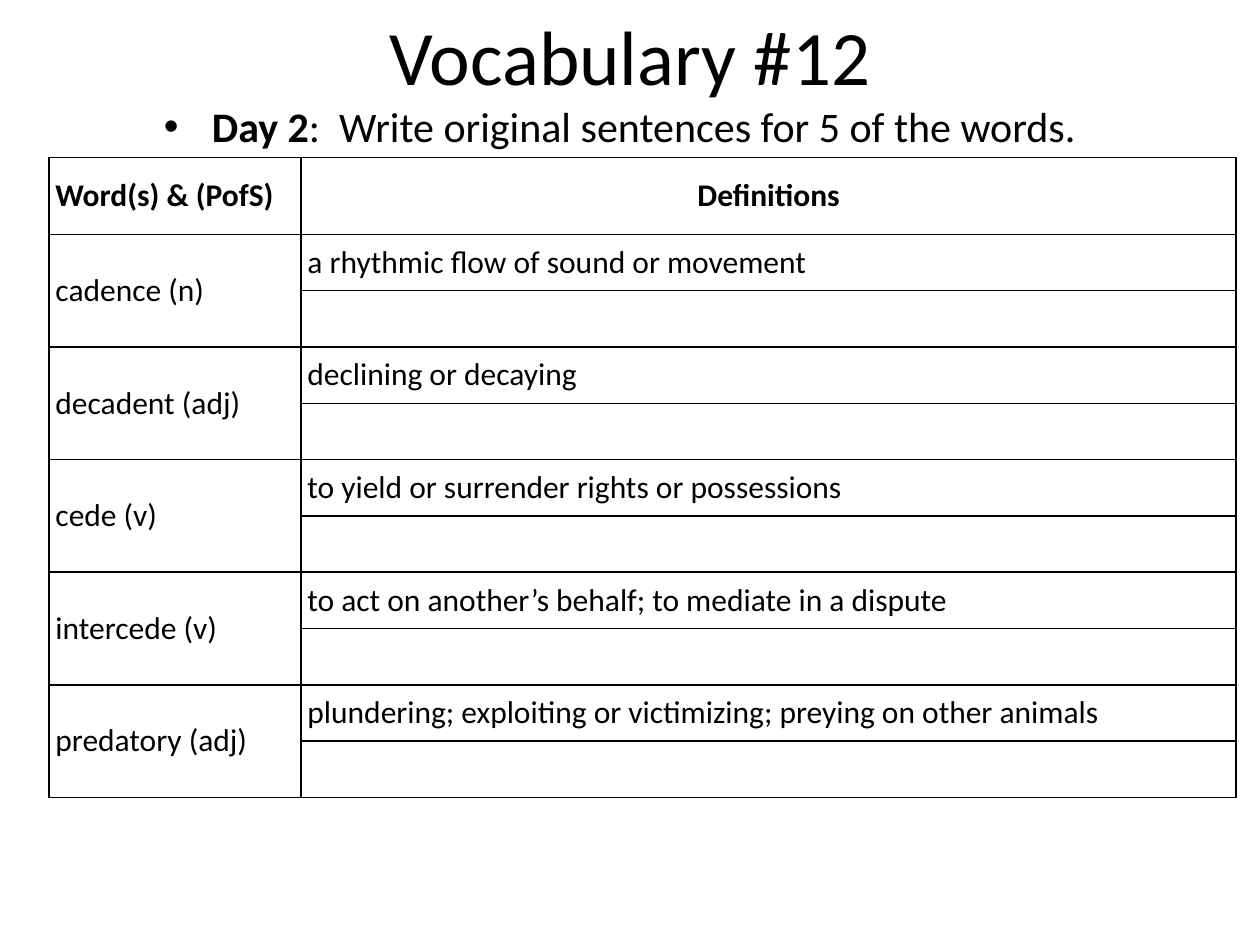
from dataclasses import dataclass

from lxml import etree
from pptx import Presentation
from pptx import util as u
from pptx.dml.color import RGBColor
from pptx.enum import text
from pptx.oxml import ns


@dataclass(frozen=True)
class Theme:
    font: str = "Calibri"
    ink: RGBColor = RGBColor(0, 0, 0)
    paper: RGBColor = RGBColor(255, 255, 255)
    title_size: int = 44
    task_size: int = 24
    table_size: int = 18
    border_width: int = 1


THEME = Theme()
HEADINGS = ("Word(s) & (PofS)", "Definitions")
WORDS = [
    ("cadence (n)", "a rhythmic flow of sound or movement"),
    ("decadent (adj)", "declining or decaying"),
    ("cede (v)", "to yield or surrender rights or possessions"),
    ("intercede (v)", "to act on another’s behalf; to mediate in a dispute"),
    ("predatory (adj)", "plundering; exploiting or victimizing; preying on other animals"),
]


def inches(*lengths):
    return [u.Inches(length) for length in lengths]


def style_font(font, size, bold=False):
    font.name = THEME.font
    font.size = u.Pt(size)
    font.bold = bold
    font.color.rgb = THEME.ink


def add_title(page, box, wording):
    title = page.shapes.title
    title.left, title.top, title.width, title.height = inches(*box)
    frame = title.text_frame
    frame.text = wording
    frame.vertical_anchor = text.MSO_ANCHOR.MIDDLE
    para = frame.paragraphs[0]
    para.alignment = text.PP_ALIGN.CENTER
    style_font(para.runs[0].font, THEME.title_size)


def add_task(page, box, label, wording):
    frame = page.shapes.add_textbox(*inches(*box)).text_frame
    frame.word_wrap = True
    para = frame.paragraphs[0]
    para.alignment = text.PP_ALIGN.CENTER
    para.space_before = u.Pt(0.2 * THEME.task_size)
    for part, bold in ((label, True), (wording, False)):
        span = para.add_run()
        span.text = part
        style_font(span.font, THEME.task_size, bold)
    settings = para._p.get_or_add_pPr()
    indent = u.Inches(0.38)
    settings.set("marL", str(indent))
    settings.set("indent", str(-indent))
    etree.SubElement(settings, ns.qn("a:buFont"), typeface="Arial")
    etree.SubElement(settings, ns.qn("a:buChar"), char="•")


def add_borders(cell):
    settings = cell._tc.get_or_add_tcPr()
    for side in ("lnL", "lnR", "lnT", "lnB"):
        line = etree.SubElement(settings, ns.qn(f"a:{side}"), w=str(u.Pt(THEME.border_width)))
        fill = etree.SubElement(line, ns.qn("a:solidFill"))
        etree.SubElement(fill, ns.qn("a:srgbClr"), val=str(THEME.ink))


def format_cell(cell):
    add_borders(cell)
    cell.fill.solid()
    cell.fill.fore_color.rgb = THEME.paper
    cell.margin_left = cell.margin_right = u.Inches(0.05)
    cell.margin_top = cell.margin_bottom = 0
    cell.vertical_anchor = text.MSO_ANCHOR.MIDDLE
    style_font(cell.text_frame.paragraphs[0].font, THEME.table_size)


def fill_cell(cell, wording, bold=False):
    cell.text_frame.text = wording
    style_font(cell.text_frame.paragraphs[0].runs[0].font, THEME.table_size, bold)


def add_vocabulary(page, box, word_width, heading_height):
    left, top, width, height = box
    row_count = 1 + 2 * len(WORDS)
    table = page.shapes.add_table(row_count, 2, *inches(*box)).table
    table.first_row = table.horz_banding = False
    table.columns[0].width, table.columns[1].width = inches(word_width, width - word_width)
    row_height = (height - heading_height) / (row_count - 1)
    for index, row in enumerate(table.rows):
        row.height = u.Inches(row_height if index else heading_height)
        for cell in row.cells:
            format_cell(cell)

    for column, heading in enumerate(HEADINGS):
        fill_cell(table.cell(0, column), heading, bold=True)
    table.cell(0, 1).text_frame.paragraphs[0].alignment = text.PP_ALIGN.CENTER
    for index, (word, definition) in enumerate(WORDS):
        row = 1 + 2 * index
        table.cell(row, 0).merge(table.cell(row + 1, 0))
        fill_cell(table.cell(row, 0), word)
        fill_cell(table.cell(row, 1), definition)


def main():
    deck = Presentation()
    deck.slide_width, deck.slide_height = inches(10, 7.5)
    page = deck.slides.add_slide(deck.slide_layouts.get_by_name("Title Only"))
    add_title(page, (0.5, 0, 9, 0.87), "Vocabulary #12")
    add_task(page, (0.42, 0.75, 9, 0.5), "Day 2", ":  Write original sentences for 5 of the words.")
    add_vocabulary(page, (0.39, 1.25, 9.42, 5.08), word_width=2, heading_height=0.61)
    deck.save("out.pptx")


if __name__ == "__main__":
    main()
